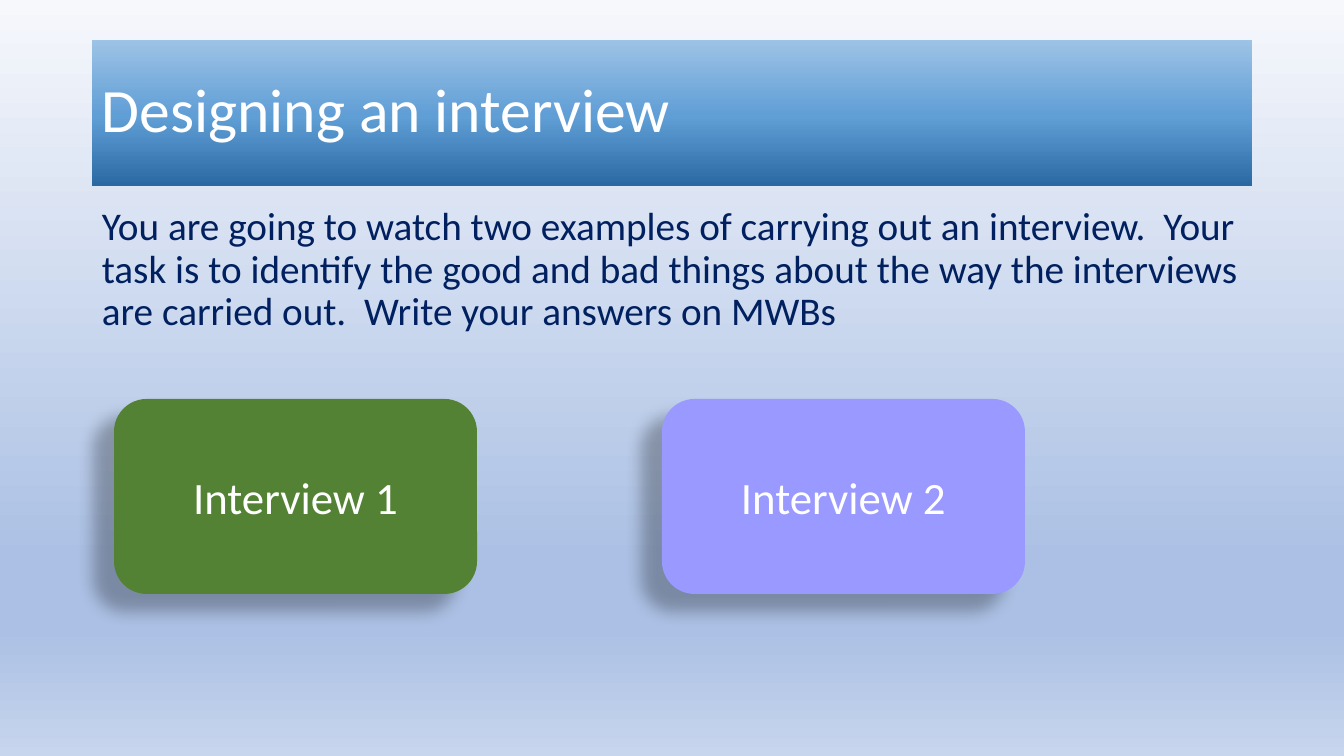
from dataclasses import dataclass

from lxml import etree
from pptx import Presentation
from pptx.dml.color import RGBColor
from pptx.enum.shapes import MSO_SHAPE
from pptx.enum.text import MSO_ANCHOR, PP_ALIGN
from pptx.oxml.ns import qn
from pptx.util import Emu, Pt

RECTANGLE = MSO_SHAPE.RECTANGLE
ROUNDED = MSO_SHAPE.ROUNDED_RECTANGLE
LEFT, CENTER = PP_ALIGN.LEFT, PP_ALIGN.CENTER
TOP, MIDDLE = MSO_ANCHOR.TOP, MSO_ANCHOR.MIDDLE

SLIDE_WIDTH, SLIDE_HEIGHT = 1344, 756
EMU_PER_PX = 12192000 / SLIDE_WIDTH


def px(length):
    return Emu(round(length * EMU_PER_PX))


@dataclass(frozen=True)
class Theme:
    font: str = "Calibri"
    title_size: int = 44
    body_size: int = 28
    button_size: int = 32
    white: str = "FFFFFF"
    navy: str = "002060"
    green: str = "548235"
    violet: str = "9999FF"
    shadow: str = "000000"
    # Gradient stops: (percent, colour)
    background: tuple = ((0, "F6F8FC"), (74, "ABC0E4"), (83, "ABC0E4"), (100, "C7D5ED"))
    banner: tuple = ((0, "9DC3E6"), (52, "609ED6"), (100, "2A69A2"))


def add_color(parent, color):
    return etree.SubElement(parent, qn("a:srgbClr"), val=color)


def write_text(shape, text, *, size, color, font, align=LEFT, anchor=TOP,
               line_spacing=1.0, space_before=0):
    frame = shape.text_frame
    frame.word_wrap = True
    frame.vertical_anchor = anchor
    paragraph = frame.paragraphs[0]
    paragraph.alignment = align
    paragraph.line_spacing = line_spacing
    paragraph.space_before = Pt(space_before)
    run = paragraph.add_run()
    run.text = text
    run.font.name = font
    run.font.size = Pt(size)
    run.font.color.rgb = RGBColor.from_string(color)


class SlideBuilder:
    def __init__(self, slide, theme):
        self.slide = slide
        self.theme = theme

    def vertical_gradient(self, fill, owner, stops):
        """Fill from top to bottom with any number of stops."""
        fill.gradient()
        fill.gradient_angle = 270
        stop_list = next(owner.iter(qn("a:gsLst")))
        for stop in list(stop_list):
            stop_list.remove(stop)
        for percent, color in stops:
            stop = etree.SubElement(stop_list, qn("a:gs"), pos=str(percent * 1000))
            add_color(stop, color)

    def background(self):
        fill = self.slide.background.fill
        self.vertical_gradient(fill, self.slide.element, self.theme.background)

    def block(self, kind, left, top, width, height):
        shape = self.slide.shapes.add_shape(kind, px(left), px(top), px(width), px(height))
        shape.shadow.inherit = False
        shape.line.fill.background()
        return shape

    def banner(self, text, left, top, width, height):
        shape = self.block(RECTANGLE, left, top, width, height)
        self.vertical_gradient(shape.fill, shape.element, self.theme.banner)
        write_text(shape, text, size=self.theme.title_size, color=self.theme.white,
                   font=self.theme.font, anchor=MIDDLE, line_spacing=0.9)

    def body(self, text, left, top, width, height):
        box = self.slide.shapes.add_textbox(px(left), px(top), px(width), px(height))
        write_text(box, text, size=self.theme.body_size, color=self.theme.navy,
                   font=self.theme.font, line_spacing=0.9, space_before=10)

    def button(self, text, color, left, top, width, height):
        shape = self.block(ROUNDED, left, top, width, height)
        shape.fill.solid()
        shape.fill.fore_color.rgb = RGBColor.from_string(color)
        self.drop_shadow(shape)
        write_text(shape, text, size=self.theme.button_size, color=self.theme.white,
                   font=self.theme.font, align=CENTER, anchor=MIDDLE)

    def drop_shadow(self, shape, blur=11.8, distance=19.7, angle=141, opacity=28):
        effects = next(shape.element.iter(qn("a:effectLst")))
        shadow = etree.SubElement(
            effects, qn("a:outerShdw"), blurRad=str(Pt(blur)), dist=str(Pt(distance)),
            dir=str(angle * 60000), algn="ctr", rotWithShape="0")
        color = add_color(shadow, self.theme.shadow)
        etree.SubElement(color, qn("a:alpha"), val=str(opacity * 1000))


def main():
    presentation = Presentation()
    presentation.slide_width = px(SLIDE_WIDTH)
    presentation.slide_height = px(SLIDE_HEIGHT)
    slide = presentation.slides.add_slide(presentation.slide_layouts[6])
    theme = Theme()
    builder = SlideBuilder(slide, theme)

    # Background, instructions and title
    builder.background()
    margin = 92
    content_width = SLIDE_WIDTH - 2 * margin
    builder.body(
        "You are going to watch two examples of carrying out an interview.  "
        "Your task is to identify the good and bad things about the way the "
        "interviews are carried out.  Write your answers on MWBs",
        margin, 202, content_width, 480)
    builder.banner("Designing an interview", margin, 40, content_width, 146)

    # Interview buttons
    first_left, pitch = 114, 548
    for index, color in enumerate((theme.green, theme.violet)):
        builder.button(f"Interview {index + 1}", color,
                       first_left + index * pitch, 399, 363, 195)

    presentation.save("out.pptx")


if __name__ == "__main__":
    main()
